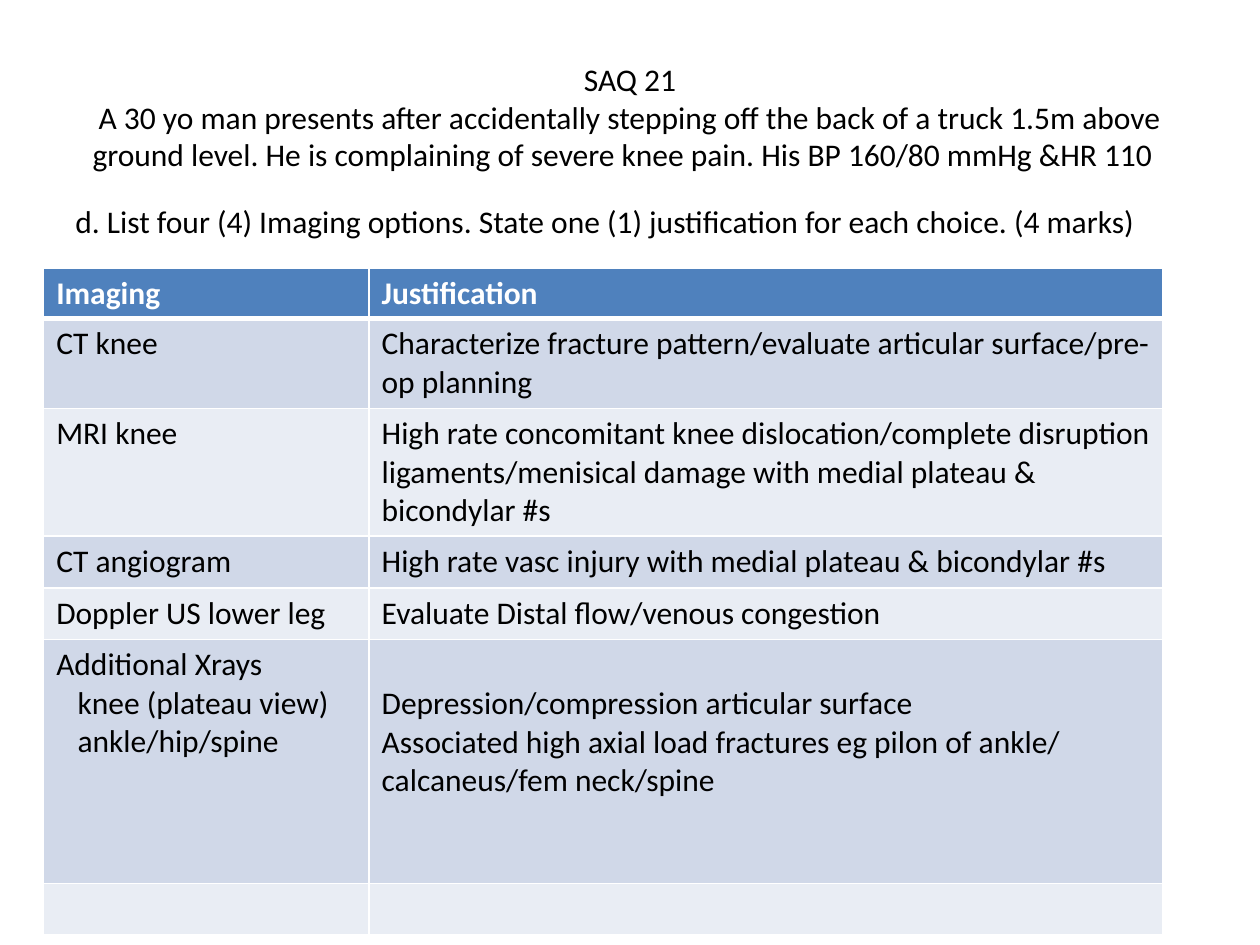
"""Build the SAQ 21 slide: knee injury question and its table of imaging options."""
from collections import namedtuple

from lxml.etree import SubElement
from pptx import Presentation
from pptx.dml.color import RGBColor as Rgb
from pptx.enum.text import MSO_ANCHOR as Anchor, PP_ALIGN as Align
from pptx.oxml.ns import qn
from pptx.util import Cm, Pt

Theme = namedtuple("Theme", "font size text white header bands thin thick")
theme = Theme("Calibri", Pt(18), "000000", "FFFFFF", "4F81BD", ("D0D8E8", "E9EDF4"), Pt(1), Pt(3))


def write(paragraph, text, color=theme.text, bold=False):
    paragraph.text = text
    for run in paragraph.runs:
        values = {"name": theme.font, "size": theme.size, "bold": bold}
        for name, value in values.items():
            setattr(run.font, name, value)
        run.font.color.rgb = Rgb.from_string(color)


def add_borders(cell, bottom):
    properties = cell._tc.get_or_add_tcPr()
    widths = {"lnL": theme.thin, "lnR": theme.thin, "lnT": theme.thin, "lnB": bottom}
    for side, width in widths.items():
        line = SubElement(properties, qn(f"a:{side}"), w=str(int(width)))
        fill = SubElement(line, qn("a:solidFill"))
        SubElement(fill, qn("a:srgbClr"), val=theme.white)


presentation = Presentation()
presentation.slide_width, presentation.slide_height = Cm(25.4), Cm(19.05)
slide = presentation.slides.add_slide(presentation.slide_layouts[6])

title = (
    "SAQ 21\vA 30 yo man presents after accidentally stepping off the back of a truck 1.5m above "
    "ground level. He is complaining of severe knee pain. His BP 160/80 mmHg &HR 110  "
)
question = "d. List four (4) Imaging options. State one (1) justification for each choice. (4 marks)"
text_boxes = [
    (title, 0.76, 3.18, Anchor.MIDDLE, {"alignment": Align.CENTER}),
    (question, 3.94, 1.2, Anchor.TOP, {"alignment": Align.LEFT, "space_before": Pt(3.6)}),
]
for text, top, height, anchor, values in text_boxes:
    text_frame = slide.shapes.add_textbox(Cm(1.27), Cm(top), Cm(22.86), Cm(height)).text_frame
    text_frame.word_wrap = True
    text_frame.vertical_anchor = anchor
    paragraph = text_frame.paragraphs[0]
    write(paragraph, text)
    for name, value in values.items():
        setattr(paragraph, name, value)

column_widths = [6.56, 16.0]
row_heights = [1.02, 1.81, 2.58, 1.04, 1.04, 4.92, 1.04]
rows = [
    (["Imaging"], ["Justification"]),
    (["CT knee"], ["Characterize fracture pattern/evaluate articular surface/pre-op planning"]),
    (
        ["MRI knee"],
        ["High rate concomitant knee dislocation/complete disruption ligaments/menisical damage "
         "with medial plateau & bicondylar #s"],
    ),
    (["CT angiogram"], ["High rate vasc injury with medial plateau & bicondylar #s"]),
    (["Doppler US lower leg"], ["Evaluate Distal flow/venous congestion"]),
    (
        ["Additional Xrays", "knee (plateau view)", "ankle/hip/spine"],
        ["Depression/compression articular surface",
         "Associated high axial load fractures eg pilon of ankle/ calcaneus/fem neck/spine"],
    ),
    ([], []),
]
table = slide.shapes.add_table(
    len(rows), len(column_widths), Cm(0.88), Cm(5.4), Cm(sum(column_widths)), Cm(sum(row_heights))
).table
for column, width in zip(table.columns, column_widths):
    column.width = Cm(width)
for row, height in zip(table.rows, row_heights):
    row.height = Cm(height)

for row_index, row in enumerate(rows):
    is_header = row_index == 0
    for column_index, lines in enumerate(row):
        cell = table.cell(row_index, column_index)
        add_borders(cell, theme.thick if is_header else theme.thin)
        cell.fill.solid()
        band = theme.bands[(row_index - 1) % 2]
        cell.fill.fore_color.rgb = Rgb.from_string(theme.header if is_header else band)
        for line_index, text in enumerate(lines):
            text_frame = cell.text_frame
            paragraph = text_frame.add_paragraph() if line_index else text_frame.paragraphs[0]
            write(paragraph, text, theme.white if is_header else theme.text, is_header)
            if line_index and column_index == 0:
                paragraph._p.get_or_add_pPr().set("marL", str(int(Cm(0.43))))

table.cell(5, 1).margin_top = Cm(0.91)

presentation.save("out.pptx")
